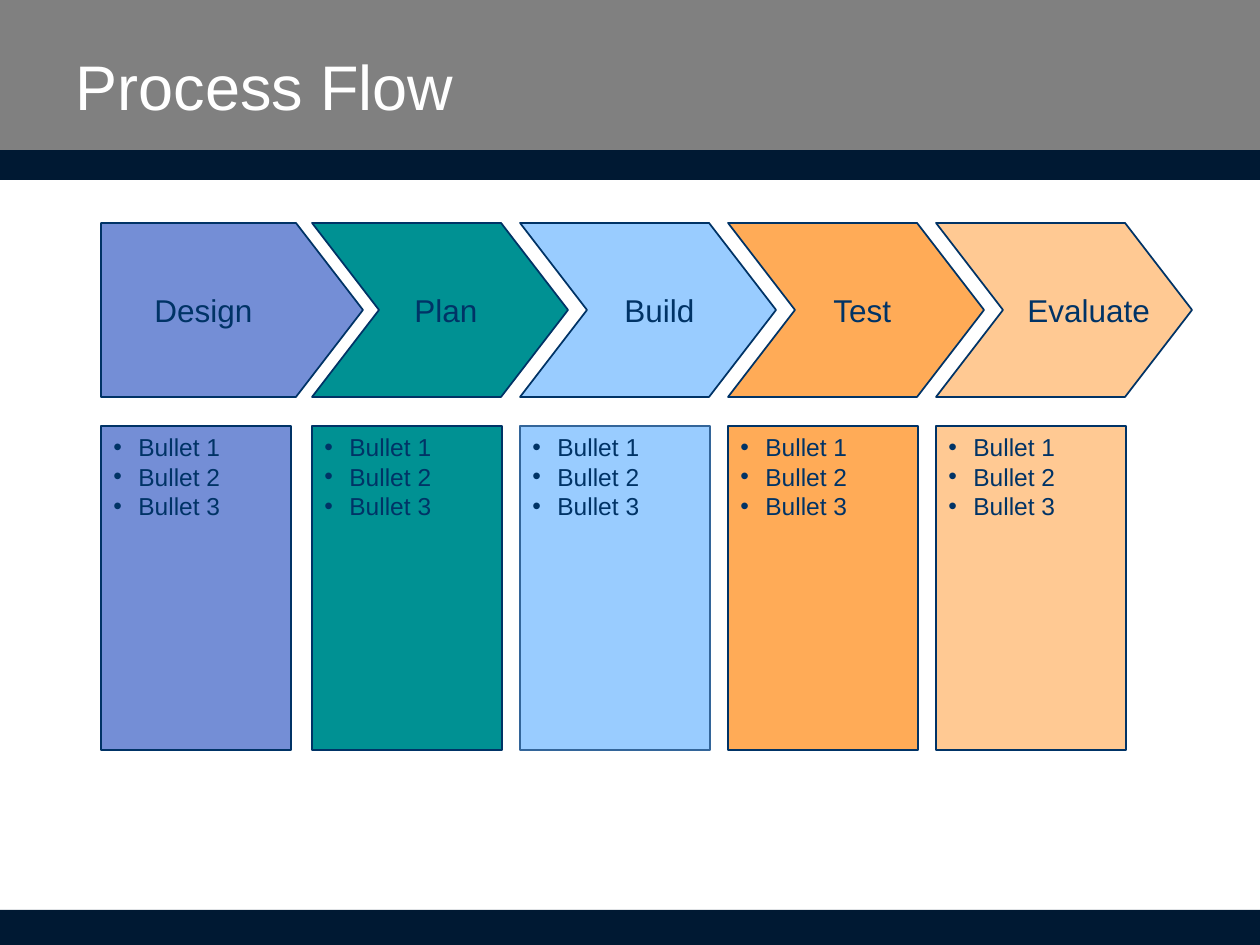
"""Build a process flow slide with five chevron stages and their bullet lists."""
from lxml import etree
from pptx import Presentation
from pptx import util as u
from pptx.dml import color
from pptx.enum import shapes, text
from pptx.oxml import ns

SCALE = 914400 / 126
COLORS = {
    "header": "808080", "band": "001933", "title": "FFFFFF",
    "ink": "003366", "soft ink": "336599",
    "Design": "748ED6", "Plan": "009193", "Build": "99CCFF",
    "Test": "FFAB57", "Evaluate": "FFC993",
}


def px(length):
    return u.Emu(round(length * SCALE))


def rgb(name):
    return color.RGBColor.from_string(COLORS[name])


class FlowSlide:
    def __init__(self, slide, font="Arial"):
        self.slide = slide
        self.font = font

    def paint(self, shape, fill, line=None):
        shape.shadow.inherit = False
        shape.fill.solid()
        shape.fill.fore_color.rgb = rgb(fill)
        if line:
            shape.line.color.rgb = rgb(line)
            shape.line.width = u.Pt(1)
        else:
            shape.line.fill.background()

    def format_text(self, frame, size, ink="ink"):
        for paragraph in frame.paragraphs:
            paragraph.alignment = text.PP_ALIGN.LEFT
            for run in paragraph.runs:
                run.font.name = self.font
                run.font.size = u.Pt(size)
                run.font.color.rgb = rgb(ink)

    def box(self, left, top, width, height, fill, line=None):
        rectangle = self.slide.shapes.add_shape(
            shapes.MSO_SHAPE.RECTANGLE, px(left), px(top), px(width), px(height))
        self.paint(rectangle, fill, line)
        return rectangle

    def title(self, wording, left, top, width, height):
        heading = self.slide.shapes.title
        heading.left, heading.top = px(left), px(top)
        heading.width, heading.height = px(width), px(height)
        frame = heading.text_frame
        frame.text = wording
        frame.vertical_anchor = text.MSO_ANCHOR.MIDDLE
        self.format_text(frame, 36, "title")
        self.slide.shapes.element.append(heading.element)

    def bullet_list(self, left, items, fill, line):
        frame = self.box(left, 426, 190, 324, fill, line).text_frame
        frame.text = "\n".join(items)
        frame.vertical_anchor = text.MSO_ANCHOR.TOP
        self.format_text(frame, 14)
        for paragraph in frame.paragraphs:
            properties = paragraph._p.get_or_add_pPr()
            properties.set("marL", str(px(25)))
            properties.set("indent", str(px(-25)))
            etree.SubElement(properties, ns.qn("a:buFont"), typeface=self.font)
            etree.SubElement(properties, ns.qn("a:buChar"), char="•")

    def chevron(self, left, body, notch, fill):
        top, middle, bottom = 223, 310, 397
        right = left + body
        outline = self.slide.shapes.build_freeform(left, top, scale=SCALE)
        points = [(right, top), (right + 67, middle), (right, bottom), (left, bottom)]
        if notch:
            points.append((left + notch, middle))
        outline.add_line_segments(points, close=True)
        self.paint(outline.convert_to_shape(), fill, "ink")

    def label(self, wording, left, width):
        frame = self.slide.shapes.add_textbox(
            px(left), px(285), px(width), px(50)).text_frame
        frame.text = wording
        frame.word_wrap = False
        frame.auto_size = text.MSO_AUTO_SIZE.SHAPE_TO_FIT_TEXT
        self.format_text(frame, 18)


def main():
    deck = Presentation()
    deck.slide_width, deck.slide_height = px(1260), px(945)
    flow = FlowSlide(deck.slides.add_slide(deck.slide_layouts[5]))

    flow.box(0, 0, 1260, 165, "header")
    flow.box(0, 150, 1260, 30, "band")
    flow.box(0, 910, 1260, 35, "band")
    flow.title("Process Flow", 63, 35, 1143, 100)

    stages = [("Design", 101, 142, 127), ("Plan", 312, 402, 92),
              ("Build", 520, 612, 100), ("Test", 728, 821, 91),
              ("Evaluate", 936, 1015, 152)]
    bullets = [f"Bullet {number}" for number in range(1, 4)]
    for stage, left, _, _ in stages:
        flow.bullet_list(left, bullets, stage,
                         "soft ink" if stage == "Build" else "ink")
    for stage, left, _, _ in stages:
        first = stage == "Design"
        flow.chevron(left, 195 if first else 189, 0 if first else 67, stage)
    for stage, _, label_left, label_width in stages:
        flow.label(stage, label_left, label_width)

    deck.save("out.pptx")


if __name__ == "__main__":
    main()
